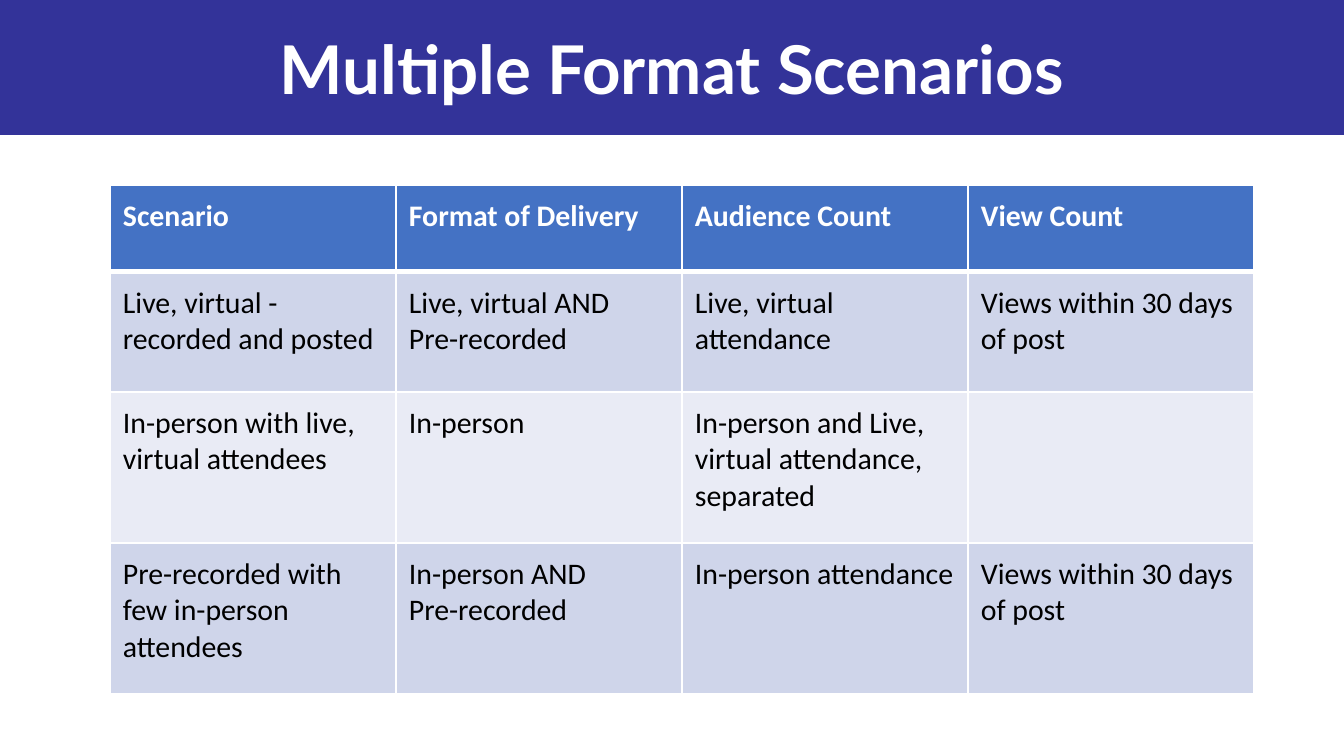
import pptx
import pptx.dml.color
import pptx.enum.shapes
import pptx.enum.text
import pptx.oxml
import pptx.oxml.ns
import pptx.util
from dataclasses import dataclass

ALIGN = pptx.enum.text.PP_ALIGN
ANCHOR = pptx.enum.text.MSO_ANCHOR


@dataclass(frozen=True)
class Theme:
    band: str = "333399"
    head: str = "4472C4"
    odd: str = "CFD5EA"
    even: str = "E9EBF5"
    light: str = "FFFFFF"
    dark: str = "000000"
    display: str = "Lato"
    body: str = "Calibri"
    title: int = 36
    text: int = 16
    gap: int = 6
    rule: int = 1
    heavy: int = 3


def px(n):
    return pptx.util.Emu(round(n * 914400 / 134.4))


def rgb(code):
    return pptx.dml.color.RGBColor.from_string(code)


def apply(item, values):
    for name, value in values.items():
        setattr(item, name, value)


class Deck:
    def __init__(self, theme, width, height):
        self.theme = theme
        self.file = pptx.Presentation()
        apply(self.file, {"slide_width": px(width), "slide_height": px(height)})
        self.slide = self.file.slides.add_slide(self.file.slide_layouts[6])

    def style(self, para, face, size, color, bold):
        apply(para.font, {"name": face, "size": pptx.util.Pt(size), "bold": bold})
        para.font.color.rgb = rgb(color)

    def band(self, x, y, w, h, color):
        shape = self.slide.shapes.add_shape(
            pptx.enum.shapes.MSO_SHAPE.RECTANGLE, px(x), px(y), px(w), px(h))
        shape.shadow.inherit = False
        shape.fill.solid()
        shape.fill.fore_color.rgb = rgb(color)
        shape.line.fill.background()

    def title(self, x, y, w, h, text):
        frame = self.slide.shapes.add_textbox(px(x), px(y), px(w), px(h)).text_frame
        apply(frame, {"word_wrap": True, "vertical_anchor": ANCHOR.MIDDLE})
        para = frame.paragraphs[0]
        apply(para, {"text": text, "alignment": ALIGN.CENTER})
        look = self.theme
        self.style(para, look.display, look.title, look.light, True)

    def edge(self, cell, side, width):
        line = pptx.oxml.parse_xml(
            f'<a:ln{side} {pptx.oxml.ns.nsdecls("a")} w="{pptx.util.Pt(width)}">'
            f'<a:solidFill><a:srgbClr val="{self.theme.light}"/></a:solidFill>'
            f'</a:ln{side}>')
        cell._tc.get_or_add_tcPr().append(line)

    def cell(self, cell, text, row):
        look = self.theme
        head = row == 0
        pad = px(13)
        apply(cell, {"text": text, "margin_left": pad, "margin_right": pad,
                     "margin_top": pad, "margin_bottom": pad})
        # The rule under the header is heavy on both cells that share it.
        heavy = {(0, "B"), (1, "T")}
        for side in "LRTB":
            self.edge(cell, side, look.heavy if (row, side) in heavy else look.rule)
        cell.fill.solid()
        fill = look.head if head else look.odd if row % 2 else look.even
        cell.fill.fore_color.rgb = rgb(fill)
        for para in cell.text_frame.paragraphs:
            self.style(para, look.body, look.text,
                       look.light if head else look.dark, head)
        para.space_after = pptx.util.Pt(look.gap)

    def table(self, x, y, width, heights, rows):
        count = len(rows[0])
        grid = self.slide.shapes.add_table(
            len(rows), count, px(x), px(y), px(width * count), px(sum(heights))).table
        grid.horz_banding = False
        for col in grid.columns:
            col.width = px(width)
        for r, (height, texts) in enumerate(zip(heights, rows)):
            grid.rows[r].height = px(height)
            for c, text in enumerate(texts):
                self.cell(grid.cell(r, c), text, r)


ROWS = [
    ["Scenario", "Format of Delivery", "Audience Count", "View Count"],
    ["Live, virtual - recorded and posted", "Live, virtual AND\nPre-recorded",
     "Live, virtual attendance", "Views within 30 days of post"],
    ["In-person with live, virtual attendees", "In-person",
     "In-person and Live, virtual attendance, separated", ""],
    ["Pre-recorded with few in-person attendees", "In-person AND\nPre-recorded",
     "In-person attendance", "Views within 30 days of post"],
]


def main():
    deck = Deck(Theme(), 1344, 756)
    deck.band(0, 0, 1344, 135, deck.theme.band)
    deck.title(0, 0, 1344, 135, "Multiple Format Scenarios")
    deck.table(110, 185, 286, [87, 120, 151, 151], ROWS)
    deck.file.save("out.pptx")


if __name__ == "__main__":
    main()
